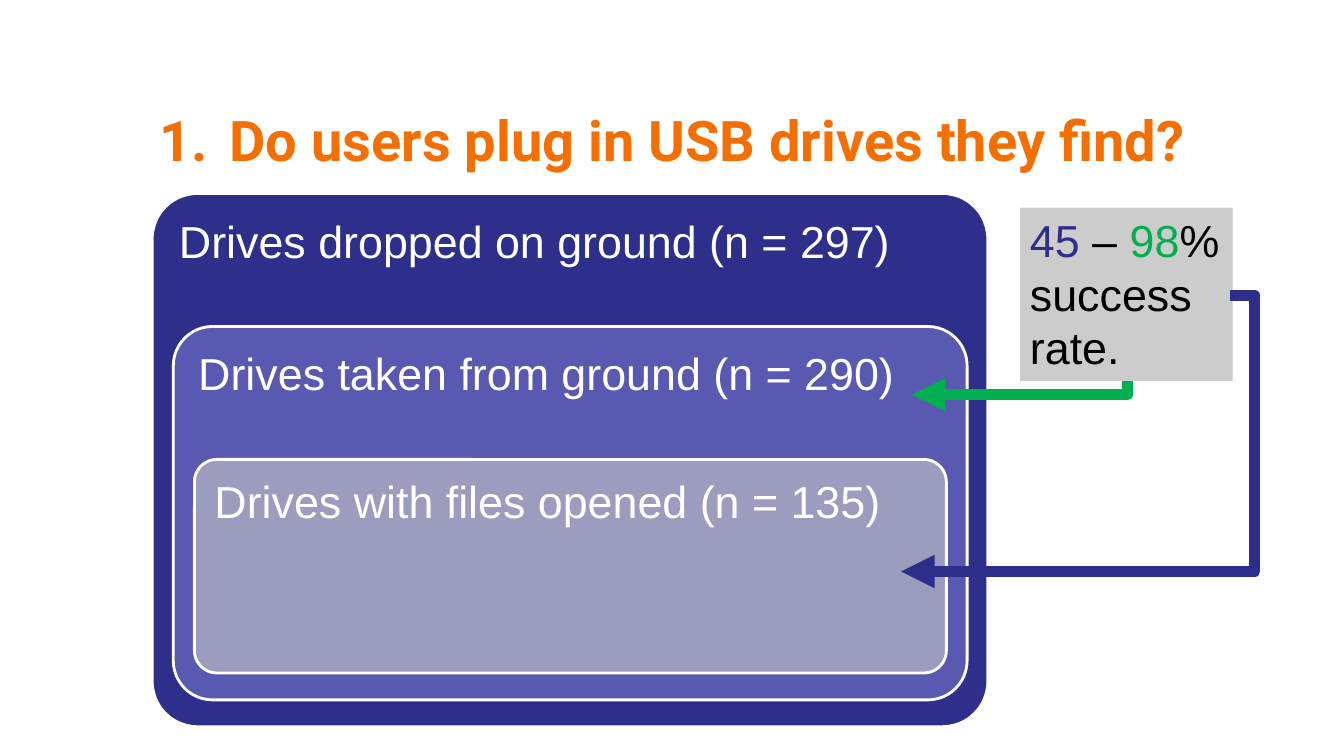
"""Build the slide on how many dropped USB drives were taken and opened."""
import dataclasses

import lxml.etree
import pptx
import pptx.dml.color
import pptx.enum.shapes
import pptx.enum.text
import pptx.oxml.ns
import pptx.util

Pt = pptx.util.Pt
qn = pptx.oxml.ns.qn


@dataclasses.dataclass(frozen=True)
class Theme:
    title_color: str = "F56F00"
    panel_fills: tuple = ("2E2E8B", "5959B1", "9C9CBF")
    note_fill: str = "CCCCCC"
    light: str = "FFFFFF"
    dark: str = "000000"
    opened: str = "2D2D8A"
    taken: str = "00B050"
    title_font: str = "Roboto"
    body_font: str = "Arial"
    title_size: int = 40
    body_size: int = 32
    outline: int = 2
    arrow: int = 8


def rgb(color):
    return pptx.dml.color.RGBColor.from_string(color)


def write_text(paragraph, text, *, font, size, color, bold=False):
    run = paragraph.add_run()
    run.text = text
    run.font.name = font
    run.font.size = Pt(size)
    run.font.bold = bold
    run.font.color.rgb = rgb(color)


class SlideBuilder:
    def __init__(self, slide, theme):
        self.slide = slide
        self.theme = theme

    def title(self, text, left, top, width, height):
        shape = self.slide.shapes.title
        shape.left, shape.top = Pt(left), Pt(top)
        shape.width, shape.height = Pt(width), Pt(height)
        shape.text_frame.vertical_anchor = pptx.enum.text.MSO_ANCHOR.MIDDLE
        paragraph = shape.text_frame.paragraphs[0]
        paragraph.alignment = pptx.enum.text.PP_ALIGN.CENTER
        properties = paragraph._p.get_or_add_pPr()
        properties.set("marL", str(Pt(40)))
        properties.set("indent", str(-Pt(40)))
        numbering = lxml.etree.SubElement(properties, qn("a:buAutoNum"))
        numbering.set("type", "arabicPeriod")
        write_text(paragraph, text, font=self.theme.title_font,
                   size=self.theme.title_size, color=self.theme.title_color, bold=True)

    def box(self, preset, left, top, width, height, fill):
        shape = self.slide.shapes.add_shape(
            preset, Pt(left), Pt(top), Pt(width), Pt(height))
        shape.shadow.inherit = False
        shape.fill.solid()
        shape.fill.fore_color.rgb = rgb(fill)
        return shape

    def panel(self, text, left, top, width, height, fill, corner, padding):
        shape = self.box(pptx.enum.shapes.MSO_SHAPE.ROUNDED_RECTANGLE,
                         left, top, width, height, fill)
        shape.adjustments[0] = corner
        shape.line.color.rgb = rgb(self.theme.light)
        shape.line.width = Pt(self.theme.outline)
        label = self.slide.shapes.add_textbox(
            Pt(left + padding), Pt(top + padding),
            Pt(width - 2 * padding), Pt(height - 2 * padding))
        frame = label.text_frame
        frame.word_wrap = True
        frame.margin_left = frame.margin_right = frame.margin_top = Pt(9.6)
        paragraph = frame.paragraphs[0]
        paragraph.line_spacing = 0.9
        write_text(paragraph, text, font=self.theme.body_font,
                   size=self.theme.body_size, color=self.theme.light)

    def note(self, pieces, left, top, width, height):
        shape = self.box(pptx.enum.shapes.MSO_SHAPE.RECTANGLE,
                         left, top, width, height, self.theme.note_fill)
        shape.line.fill.background()
        frame = shape.text_frame
        frame.word_wrap = True
        frame.auto_size = pptx.enum.text.MSO_AUTO_SIZE.SHAPE_TO_FIT_TEXT
        frame.vertical_anchor = pptx.enum.text.MSO_ANCHOR.TOP
        paragraph = frame.paragraphs[0]
        paragraph.alignment = pptx.enum.text.PP_ALIGN.LEFT
        for text, color in pieces:
            write_text(paragraph, text, font=self.theme.body_font,
                       size=self.theme.body_size, color=color)

    def bent_arrow(self, begin, end, color, rotation, preset, bend=None):
        connector = self.slide.shapes.add_connector(
            pptx.enum.shapes.MSO_CONNECTOR.ELBOW, *map(Pt, begin + end))
        connector.line.color.rgb = rgb(color)
        connector.line.width = Pt(self.theme.arrow)
        properties = connector.element.spPr
        properties.find(qn("a:xfrm")).set("rot", str(rotation * 60000))
        geometry = properties.find(qn("a:prstGeom"))
        geometry.set("prst", preset)
        if bend is not None:
            guide = lxml.etree.SubElement(geometry.find(qn("a:avLst")), qn("a:gd"))
            guide.set("name", "adj1")
            guide.set("fmla", f"val {round(bend * 100000)}")
        head = lxml.etree.SubElement(properties.find(qn("a:ln")), qn("a:tailEnd"))
        head.set("type", "triangle")
        lxml.etree.SubElement(properties, qn("a:effectLst"))


def main():
    presentation = pptx.Presentation()
    presentation.slide_width, presentation.slide_height = Pt(960), Pt(540)
    slide = presentation.slides.add_slide(presentation.slide_layouts[5])
    theme = Theme()
    builder = SlideBuilder(slide, theme)

    builder.title(" Do users plug in USB drives they find?", 48, 54, 864, 90)

    panels = (
        ("Drives dropped on ground (n = 297)", 0.085, 9.5),
        ("Drives taken from ground (n = 290)", 0.105, 8.2),
        ("Drives with files opened (n = 135)", 0.105, 4.7),
    )
    for level, (text, corner, padding) in enumerate(panels):
        builder.panel(text, 108.7 + 15.1 * level, 138.2 + 95 * level,
                      596.9 - 29.9 * level, 380.9 - 114.2 * level,
                      theme.panel_fills[level], corner, padding)

    builder.note((("45", theme.opened), (" – ", theme.dark), ("98", theme.taken),
                  ("% success rate.", theme.dark)), 728.6, 148.3, 151.9, 123.8)
    builder.bent_arrow((723.6, 200.2), (733, 354.2), theme.taken, 90, "bentConnector2")
    builder.bent_arrow((643.7, 408.2), (878.8, 211), theme.opened, 180,
                       "bentConnector3", bend=-0.074)

    presentation.save("out.pptx")


if __name__ == "__main__":
    main()
